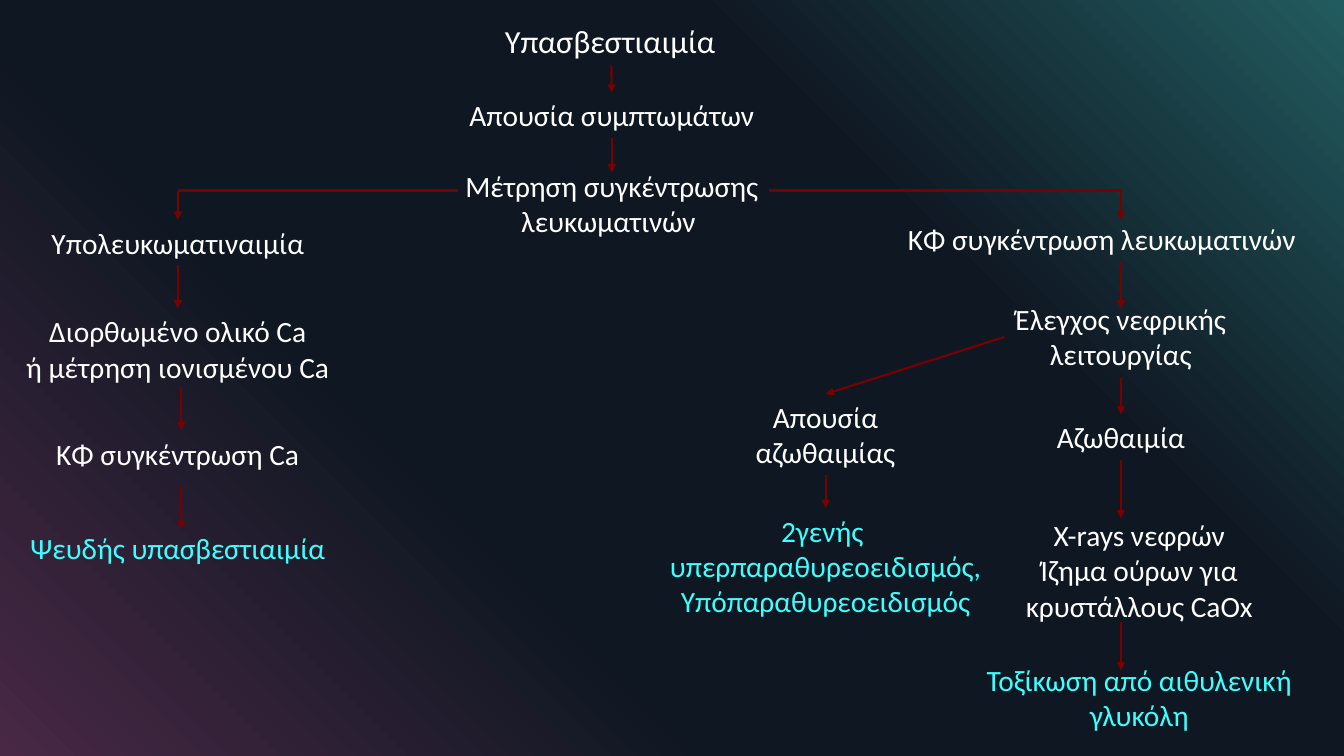
from copy import deepcopy
from dataclasses import dataclass

from pptx import Presentation
from pptx import util as u
from pptx.dml.color import RGBColor
from pptx.enum import shapes, text
from pptx.oxml import ns, xmlchemy

TOP, LEFT, BOTTOM = 0, 1, 2


@dataclass
class Theme:
    font: str = "Calibri"
    head: float = 23
    body: float = 21
    step: float = 25.4
    ink: str = "FFFFFF"
    end: str = "3DFFFF"
    line: str = "7A0000"
    width: float = 1.5
    back: tuple = ((0, "482845"), (0.34, "0F1722"),
                   (0.69, "0F1722"), (1, "225B5F"))


class Chart:
    def __init__(self, slide, theme):
        self.slide = slide
        self.theme = theme

    def paint(self):
        fill = self.slide.background.fill
        fill.gradient()
        fill.gradient_angle = 45
        stops = self.slide.element.xpath(".//a:gsLst")[0]
        while len(stops) < len(self.theme.back):
            stops.append(deepcopy(stops[0]))
        for stop, (place, color) in zip(fill.gradient_stops, self.theme.back):
            stop.position = place
            stop.color.rgb = RGBColor.from_string(color)

    def style(self, shape, words, size, color, align):
        frame = shape.text_frame
        frame.text = words
        frame.word_wrap = False
        frame.auto_size = text.MSO_AUTO_SIZE.SHAPE_TO_FIT_TEXT
        frame.vertical_anchor = text.MSO_ANCHOR.TOP
        for para in frame.paragraphs:
            para.alignment = align
            for run in para.runs:
                run.font.name = self.theme.font
                run.font.size = u.Pt(size)
                run.font.color.rgb = RGBColor.from_string(color)

    def title(self, words, left, top, width, height):
        shape = self.slide.shapes.title
        shape.left, shape.top = u.Pt(left), u.Pt(top)
        shape.width, shape.height = u.Pt(width), u.Pt(height)
        self.style(shape, words, self.theme.head, self.theme.ink,
                   text.PP_ALIGN.LEFT)
        return shape

    def node(self, words, mid, top, width, color=None):
        rows = len(words.replace("\v", "\n").split("\n"))
        shape = self.slide.shapes.add_textbox(
            u.Pt(mid - width / 2), u.Pt(top), u.Pt(width),
            u.Pt(7.2 + rows * self.theme.step))
        self.style(shape, words, self.theme.body, color or self.theme.ink,
                   text.PP_ALIGN.CENTER)
        return shape

    def link(self, start, end, arrow=True):
        wire = self.slide.shapes.add_connector(
            shapes.MSO_CONNECTOR.STRAIGHT, 0, 0, 0, 0)
        if isinstance(start[0], (int, float)):
            wire.begin_x, wire.begin_y = map(u.Pt, start)
        else:
            wire.begin_connect(*start)
        if isinstance(end[0], (int, float)):
            wire.end_x, wire.end_y = map(u.Pt, end)
        else:
            wire.end_connect(*end)
        wire.line.width = u.Pt(self.theme.width)
        wire.line.color.rgb = RGBColor.from_string(self.theme.line)
        props = wire.element.spPr
        if arrow:
            tail = xmlchemy.OxmlElement("a:tailEnd")
            tail.set("type", "triangle")
            props.find(ns.qn("a:ln")).append(tail)
        props.append(xmlchemy.OxmlElement("a:effectLst"))


def main():
    deck = Presentation()
    deck.slide_width, deck.slide_height = u.Pt(960), u.Pt(540)
    theme = Theme()
    chart = Chart(deck.slides.add_slide(deck.slide_layouts[5]), theme)
    chart.paint()
    west, core, mid, east, edge = 127, 437, 589.7, 800.6, 813.8
    bend = 136.1

    root = chart.title("Υπασβεστιαιμία", 353.5, 11.5, 166.5, 35.3)
    calm = chart.node("Απουσία συμπτωμάτων", core, 66.2, 219.6)
    chart.node("Μέτρηση συγκέντρωσης\nλευκωματινών ", core, 116.6, 225.4)

    low = chart.node("Υπολευκωματιναιμία", west, 157, 196.6)
    fix = chart.node("Διορθωμένο ολικό Ca\vή μέτρηση ιονισμένου Ca",
                     west, 220.3, 233.3)
    chart.node("ΚΦ συγκέντρωση Ca", west, 308.2, 189.4)
    chart.node("Ψευδής υπασβεστιαιμία", west, 375.1, 226.8, theme.end)

    norm = chart.node("ΚΦ συγκέντρωση λευκωματινών", 787, 154.1, 293.8)
    test = chart.node("Έλεγχος νεφρικής\vλειτουργίας", east, 211.7, 166.3)
    high = chart.node("Αζωθαιμία", east, 295.9, 106.6)
    chart.node("X-rays νεφρών\nΊζημα ούρων για\vκρυστάλλους CaOx",
               edge, 365.8, 177.8)
    chart.node("Τοξίκωση από αιθυλενική\vγλυκόλη", edge, 469.4, 234.7,
               theme.end)
    none = chart.node("Απουσία\vαζωθαιμίας", mid, 281.5, 115.2)
    gland = chart.node("2γενής \vυπερπαραθυρεοειδισμός,\vΥπόπαραθυρεοειδισμός",
                       mid, 362.9, 239, theme.end)

    chart.link((327, bend), (west, bend), arrow=False)
    chart.link((549.4, bend), (east, bend), arrow=False)
    for start, end in (
        ((root, BOTTOM), (calm, TOP)),
        ((calm, BOTTOM), (core, 123.1)),
        ((west, bend), (low, TOP)),
        ((east, bend), (east, 157)),
        ((low, BOTTOM), (fix, TOP)),
        ((129.6, 276.5), (129.6, 307.4)),
        ((129.6, 347), (129.6, 378)),
        ((east, 187.2), (east, 220.3)),
        ((test, LEFT), (none, TOP)),
        ((none, BOTTOM), (gland, TOP)),
        ((test, BOTTOM), (high, TOP)),
        ((high, BOTTOM), (east, 370.1)),
        ((east, 444.2), (east, 478.8)),
    ):
        chart.link(start, end)
    deck.save("out.pptx")


if __name__ == "__main__":
    main()
